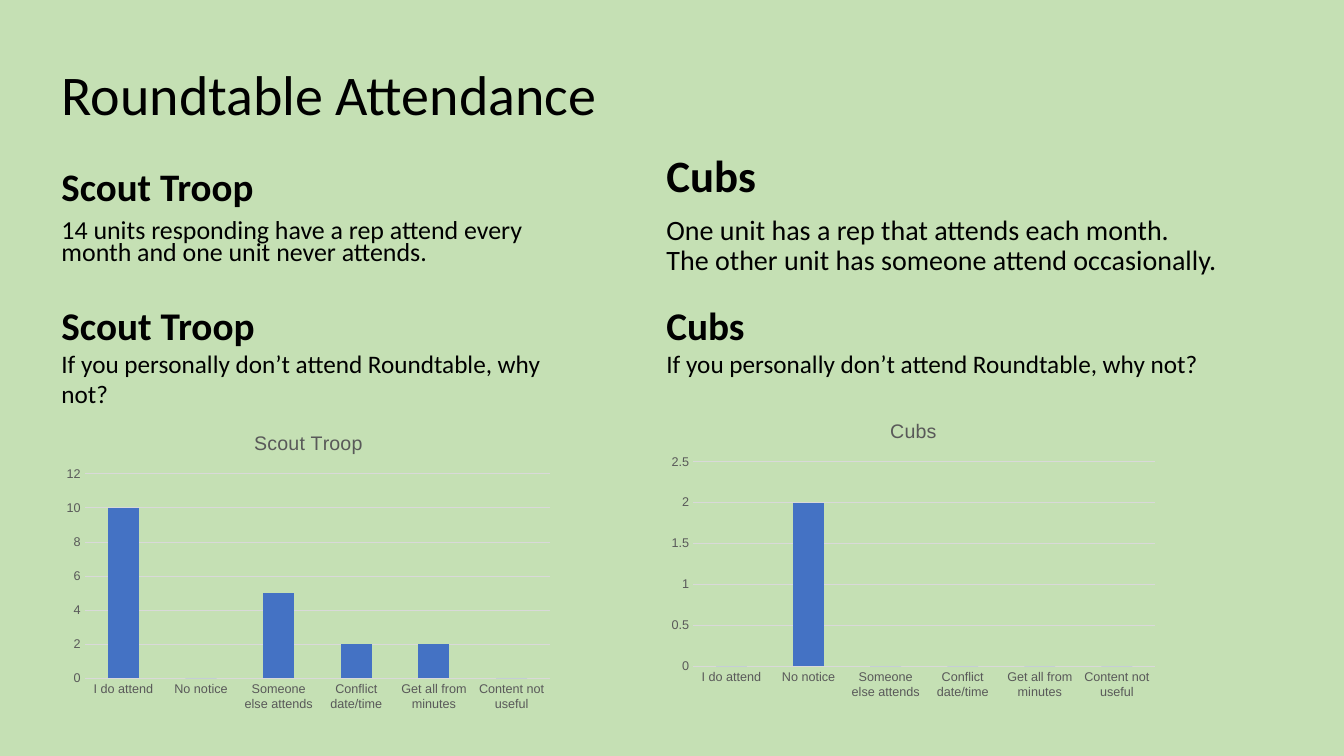
from dataclasses import dataclass

from pptx import Presentation
from pptx.chart.data import CategoryChartData
from pptx.dml.color import RGBColor
from pptx.enum.chart import XL_CHART_TYPE, XL_TICK_MARK
from pptx.enum.text import MSO_ANCHOR, MSO_AUTO_SIZE, PP_ALIGN
from pptx.util import Inches, Pt

COLUMN = XL_CHART_TYPE.COLUMN_CLUSTERED
NO_TICK = XL_TICK_MARK.NONE
MIDDLE, TOP = MSO_ANCHOR.MIDDLE, MSO_ANCHOR.TOP
NO_FIT, GROW = MSO_AUTO_SIZE.NONE, MSO_AUTO_SIZE.SHAPE_TO_FIT_TEXT
LEFT = PP_ALIGN.LEFT


@dataclass(frozen=True)
class Theme:
    background = RGBColor.from_string("C5E0B4")
    ink = RGBColor.from_string("000000")
    label = RGBColor.from_string("595959")
    grid = RGBColor.from_string("D9D9D9")
    bar = RGBColor.from_string("4472C4")
    text_font = "Calibri"
    chart_font = "Arial"
    title_size = 40
    question_sizes = (28, 18)
    chart_title_size = 14
    chart_size = 10
    axis_size = 9


theme = Theme()


def write(box, texts, sizes, spacing=1.0, before=0, anchor=TOP, fit=NO_FIT):
    frame = box.text_frame
    frame.word_wrap = True
    frame.auto_size = fit
    frame.vertical_anchor = anchor
    frame.margin_left = frame.margin_right = Inches(0.05)
    frame.margin_top = frame.margin_bottom = Inches(0.05)
    for index, (text, size) in enumerate(zip(texts, sizes)):
        para = frame.add_paragraph() if index else frame.paragraphs[0]
        para.text = text
        para.alignment = LEFT
        para.line_spacing = spacing
        para.space_before = Pt(before if index else 0)
        for span in para.runs:
            style(span.font, theme.text_font, size, theme.ink)
            span.font.bold = len(texts) > 1 and index == 0


def style(font, name, size, color):
    font.name = name
    font.size = Pt(size)
    font.color.rgb = color


deck = Presentation()
deck.slide_width, deck.slide_height = Inches(13.33), Inches(7.5)
slide = deck.slides.add_slide(deck.slide_layouts[5])
slide.background.fill.solid()
slide.background.fill.fore_color.rgb = theme.background

title = slide.shapes.title
title.left, title.top = Inches(0.56), Inches(0.24)
title.width, title.height = Inches(11.27), Inches(1.45)
write(title, ["Roundtable Attendance"], [theme.title_size], spacing=0.9, anchor=MIDDLE)

question = "If you personally don’t attend Roundtable, why not?"
reasons = ["I do attend", "No notice", "Someone else attends",
           "Conflict date/time", "Get all from minutes", "Content not useful"]
groups = [
    dict(name="Scout Troop", left=0.56,
         answer="14 units responding have a rep attend every month and one unit never attends.",
         answer_box=(1.69, 5.13, 1.03), answer_sizes=(27.8, 18.5), spacing=0.7,
         question_box=(5.16, 1.18), chart_top=4.12,
         votes=(10, 0, 5, 2, 2, 0), top_vote=12, step=2),
    dict(name="Cubs", left=6.56,
         answer="One unit has a rep that attends each month.\vThe other unit has someone attend occasionally.",
         answer_box=(1.48, 5.62, 2.17), answer_sizes=(32, 20), spacing=0.9,
         question_box=(5.49, 0.88), chart_top=4,
         votes=(0, 2, 0, 0, 0, 0), top_vote=2.5, step=0.5),
]

for group in groups:
    left = Inches(group["left"])
    top, width, height = map(Inches, group["answer_box"])
    answer_box = slide.shapes.add_textbox(left, top, width, height)
    write(answer_box, [group["name"], group["answer"]], group["answer_sizes"],
          spacing=group["spacing"], before=10)

    width, height = map(Inches, group["question_box"])
    question_box = slide.shapes.add_textbox(left, Inches(2.94), width, height)
    write(question_box, [group["name"], question], theme.question_sizes, fit=GROW)

    data = CategoryChartData()
    data.categories = reasons
    data.add_series("Series 1", group["votes"])
    chart = slide.shapes.add_chart(COLUMN, left, Inches(group["chart_top"]),
                                   Inches(5), Inches(3), data).chart
    style(chart.font, theme.chart_font, theme.chart_size, theme.ink)
    chart.has_legend = False
    chart.has_title = True
    heading = chart.chart_title.text_frame.paragraphs[0]
    heading.text = group["name"]
    for span in heading.runs:
        style(span.font, theme.chart_font, theme.chart_title_size, theme.label)
        span.font.bold = False

    for axis in (chart.category_axis, chart.value_axis):
        axis.major_tick_mark = axis.minor_tick_mark = NO_TICK
        axis.format.line.fill.background()
        style(axis.tick_labels.font, theme.chart_font, theme.axis_size, theme.label)
    votes_axis = chart.value_axis
    votes_axis.minimum_scale = 0
    votes_axis.maximum_scale = group["top_vote"]
    votes_axis.major_unit = group["step"]
    votes_axis.has_major_gridlines = True
    grid = votes_axis.major_gridlines.format.line
    grid.color.rgb = theme.grid
    grid.width = Pt(0.75)

    plot = chart.plots[0]
    plot.gap_width = 150
    plot.vary_by_categories = False
    bars = plot.series[0].format.fill
    bars.solid()
    bars.fore_color.rgb = theme.bar

deck.save("out.pptx")
